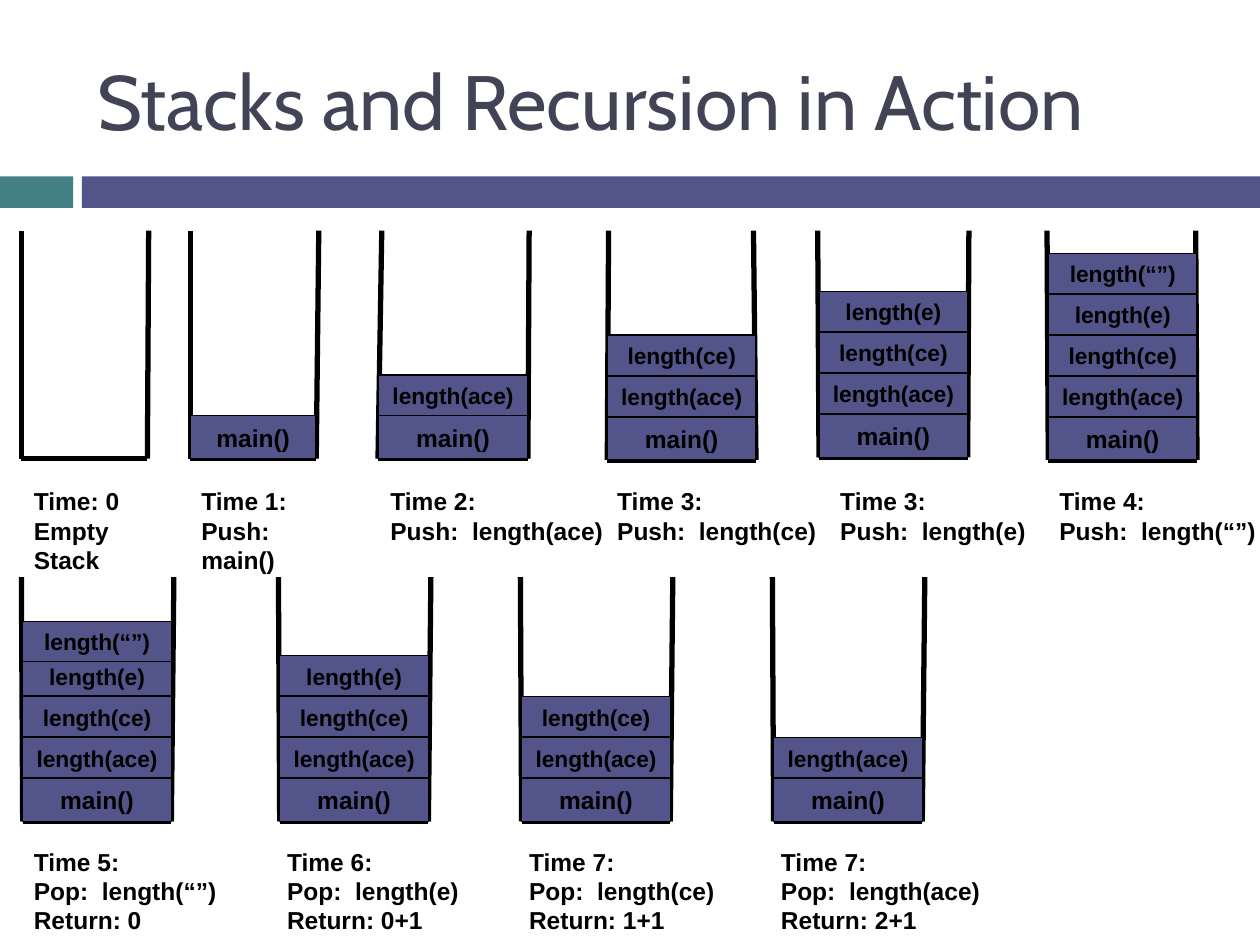
from dataclasses import dataclass

from lxml import etree
from pptx import Presentation
from pptx.dml.color import RGBColor
from pptx.enum import shapes, text
from pptx.oxml import ns
from pptx.util import Inches, Pt

INDIGO, TEAL, SLATE, BLACK = "53548A", "438086", "424456", "000000"
MAIN_HEIGHT, CALL_HEIGHT, CALL_PITCH = 0.34, 0.32, 0.325


@dataclass
class Row:
    top: float
    caption_top: float


@dataclass
class Stack:
    row: Row
    left: float
    width: float
    floor: float
    calls: list[str]  # bottom to top
    caption: list[str]
    caption_left: float
    caption_width: float
    left_lean: float = -0.01  # offset of each wall's upper end
    right_lean: float = 0.02
    last_call_drop: float = 0
    wraps: bool = False


PUSH_ROW, POP_ROW = Row(1.83, 3.81), Row(4.58, 6.67)
MAIN, ACE, CE, E, EMPTY = "main()", "length(ace)", "length(ce)", "length(e)", "length(“”)"

STACKS = [
    Stack(PUSH_ROW, 0.17, 1, 3.64, [], ["Time: 0", "Empty Stack"],
          0.17, 1.36, 0, 0.01, wraps=True),
    Stack(PUSH_ROW, 1.51, 1, 3.64, [MAIN], ["Time 1:", "Push:  main()"],
          1.5, 1.43, 0, 0.02, wraps=True),
    Stack(PUSH_ROW, 3, 1.19, 3.64, [MAIN, ACE], ["Time 2:", "Push:  length(ace)"],
          3, 1.93, 0.03, 0.01),
    Stack(PUSH_ROW, 4.82, 1.18, 3.65, [MAIN, ACE, CE], ["Time 3:", "Push:  length(ce)"],
          4.8, 1.79, 0.01, -0.02),
    Stack(PUSH_ROW, 6.5, 1.18, 3.63, [MAIN, ACE, CE, E], ["Time 3:", "Push:  length(e)"],
          6.57, 1.68, right_lean=0.01),
    Stack(PUSH_ROW, 8.32, 1.18, 3.65, [MAIN, ACE, CE, E, EMPTY],
          ["Time 4:", "Push:  length(“”)"], 8.31, 1.77, right_lean=-0.01),
    Stack(POP_ROW, 0.18, 1.18, 6.52, [MAIN, ACE, CE, E, EMPTY],
          ["Time 5:", "Pop:  length(“”)", "Return: 0"], 0.17, 1.66, last_call_drop=0.05),
    Stack(POP_ROW, 2.22, 1.18, 6.52, [MAIN, ACE, CE, E],
          ["Time 6:", "Pop:  length(e)", "Return: 0+1"], 2.18, 1.57),
    Stack(POP_ROW, 4.14, 1.18, 6.52, [MAIN, ACE, CE],
          ["Time 7:", "Pop:  length(ce)", "Return: 1+1"], 4.1, 1.68),
    Stack(POP_ROW, 6.14, 1.18, 6.52, [MAIN, ACE],
          ["Time 7:", "Pop:  length(ace)", "Return: 2+1"], 6.1, 1.9),
]


def color(hex_code: str) -> RGBColor:
    return RGBColor.from_string(hex_code)


def format_text(frame, size: float, font: str, hex_code: str, bold: bool, align) -> None:
    for paragraph in frame.paragraphs:
        paragraph.alignment = align
        for run in paragraph.runs:
            run.font.size = Pt(size)
            run.font.name = font
            run.font.bold = bold
            run.font.color.rgb = color(hex_code)


def add_block(slide, left: float, top: float, width: float, height: float, fill: str):
    block = slide.shapes.add_shape(shapes.MSO_SHAPE.RECTANGLE, Inches(left), Inches(top),
                                   Inches(width), Inches(height))
    block.shadow.inherit = False
    block.fill.solid()
    block.fill.fore_color.rgb = color(fill)
    block.line.fill.background()
    return block


def add_side(slide, x1: float, y1: float, x2: float, y2: float) -> None:
    side = slide.shapes.add_connector(shapes.MSO_CONNECTOR.STRAIGHT, Inches(x1), Inches(y1),
                                      Inches(x2), Inches(y2))
    side.line.width = Pt(3)
    side.line.color.rgb = color(BLACK)
    etree.SubElement(side.element.spPr, ns.qn("a:effectLst"))


def add_call(slide, left: float, top: float, width: float, call: str) -> None:
    height, size = (MAIN_HEIGHT, 14) if call == MAIN else (CALL_HEIGHT, 13)
    block = add_block(slide, left, top, width, height, INDIGO)
    block.line.color.rgb = color(BLACK)
    block.line.width = Pt(0.75)
    frame = block.text_frame
    frame.text = call
    frame.vertical_anchor = text.MSO_ANCHOR.MIDDLE
    format_text(frame, size, "Arial", BLACK, True, text.PP_ALIGN.CENTER)


def add_caption(slide, stack: Stack) -> None:
    height = 0.68 if stack.wraps else 0.1 + 0.235 * len(stack.caption)
    box = slide.shapes.add_textbox(Inches(stack.caption_left), Inches(stack.row.caption_top),
                                   Inches(stack.caption_width), Inches(height))
    frame = box.text_frame
    frame.text = "\n".join(stack.caption)
    frame.word_wrap = stack.wraps
    if stack.wraps:
        frame.margin_right = Inches(0.4)
    format_text(frame, 14, "Arial", BLACK, True, text.PP_ALIGN.LEFT)


def draw_stack(slide, stack: Stack) -> None:
    left, right = stack.left, stack.left + stack.width
    add_side(slide, left + stack.left_lean, stack.row.top, left, stack.floor)
    add_side(slide, left, stack.floor, right, stack.floor)
    add_side(slide, right, stack.floor, right + stack.right_lean, stack.row.top)
    for level, call in enumerate(stack.calls):
        top = stack.floor - MAIN_HEIGHT - level * CALL_PITCH
        if level == len(stack.calls) - 1:
            top += stack.last_call_drop
        add_call(slide, left, top, stack.width, call)
    add_caption(slide, stack)


def main() -> None:
    deck = Presentation()
    deck.slide_width, deck.slide_height = Inches(10), Inches(7.5)
    slide = deck.slides.add_slide(deck.slide_layouts[5])

    # Title and the band below it
    title = slide.shapes.title
    title.left, title.top = Inches(0.67), Inches(0.25)
    title.width, title.height = Inches(8.92), Inches(1.08)
    title.text_frame.text = "Stacks and Recursion in Action"
    title.text_frame.vertical_anchor = text.MSO_ANCHOR.MIDDLE
    format_text(title.text_frame, 44, "Cabin", SLATE, False, text.PP_ALIGN.LEFT)
    add_block(slide, 0, 1.4, 0.58, 0.25, TEAL)
    add_block(slide, 0.65, 1.4, 9.35, 0.25, INDIGO)

    # Call stack at each point in time
    for stack in STACKS:
        draw_stack(slide, stack)

    deck.save("out.pptx")


if __name__ == "__main__":
    main()
